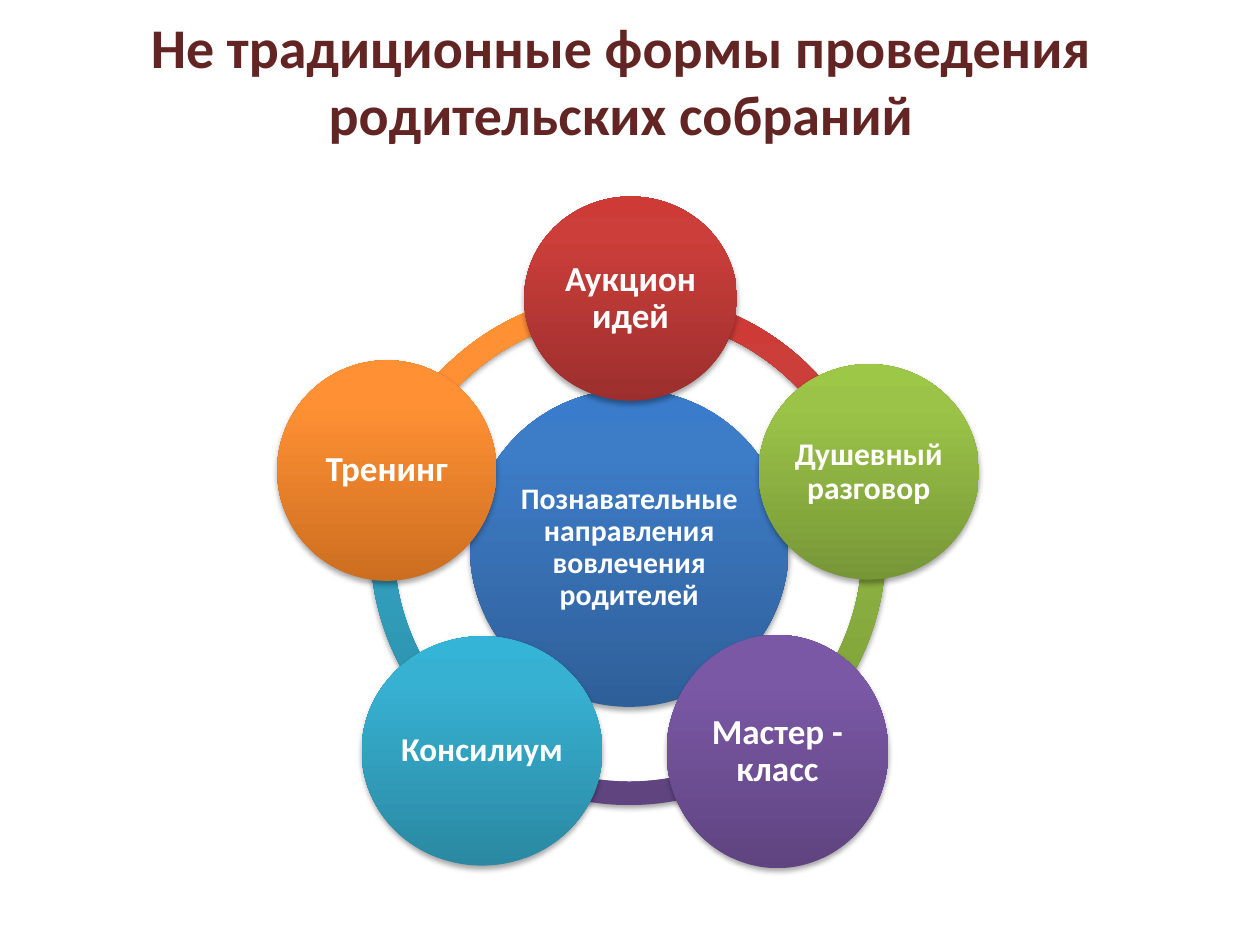
"""Build a slide with a ring of five parent-meeting formats around a central topic."""
import pptx
import pptx.dml.color
import pptx.enum.shapes
import pptx.enum.text
import pptx.oxml
import pptx.oxml.ns
import pptx.util

Inches = pptx.util.Inches
SHAPE = pptx.enum.shapes.MSO_SHAPE
MIDDLE = pptx.enum.text.MSO_ANCHOR.MIDDLE

THEME = {
    "font": "Calibri",
    "title": "632523",
    "label": "FFFFFF",
    "shadow": "000000",
    "blue": ("2F5F99", "3D7CC7", "3A7CCB"),
    "red": ("9C2F2D", "CB3E3A", "CE3B37"),
    "green": ("779737", "9BC348", "9DC746"),
    "purple": ("5F4480", "7B58A6", "7C57A8"),
    "teal": ("2A88A2", "37B1D2", "34B4D6"),
    "orange": ("CC6E20", "FF9034", "FF9136"),
    "title_size": 32,
    "core_size": 17,
    "small_size": 18,
    "medium_size": 19,
    "large_size": 20,
}


def add_glossy(kind, box, hue):
    shape = slide.shapes.add_shape(kind, *(Inches(length) for length in box))
    shape.line.fill.background()
    namespace = pptx.oxml.ns.nsdecls("a")
    stops = "".join(
        f'<a:gs pos="{position}"><a:srgbClr val="{color}"/></a:gs>'
        for position, color in zip((0, 80000, 100000), THEME[hue])
    )
    properties = shape._element.spPr
    properties.insert(2, pptx.oxml.parse_xml(
        f'<a:gradFill {namespace} rotWithShape="1"><a:gsLst>{stops}</a:gsLst>'
        '<a:lin ang="16200000" scaled="0"/></a:gradFill>'
    ))
    properties.append(pptx.oxml.parse_xml(
        f'<a:effectLst {namespace}><a:outerShdw blurRad="40000" dist="23000" '
        f'dir="5400000" rotWithShape="0"><a:srgbClr val="{THEME["shadow"]}">'
        '<a:alpha val="35000"/></a:srgbClr></a:outerShdw></a:effectLst>'
    ))
    return shape


def write(frame, words, size, color):
    frame.text = words
    frame.word_wrap = True
    frame.auto_size = pptx.enum.text.MSO_AUTO_SIZE.NONE
    frame.vertical_anchor = MIDDLE
    paragraph = frame.paragraphs[0]
    paragraph.alignment = pptx.enum.text.PP_ALIGN.CENTER
    font = paragraph.runs[0].font
    font.name = THEME["font"]
    font.size = pptx.util.Pt(THEME[size])
    font.bold = True
    font.color.rgb = pptx.dml.color.RGBColor.from_string(THEME[color])


deck = pptx.Presentation()
deck.slide_width, deck.slide_height = Inches(10), Inches(7.5)
slide = deck.slides.add_slide(deck.slide_layouts[5])

heading = slide.shapes.title
heading.left, heading.top = Inches(0.43), Inches(0.21)
heading.width, heading.height = Inches(9), Inches(0.85)
write(heading.text_frame, "Не традиционные формы проведения родительских собраний",
      "title_size", "title")

RING_SIZE = 4.07
RING_THICKNESS = 0.046
ring_corners = {
    "red": (2.96, 2.32),
    "green": (2.96, 2.32),
    "purple": (2.96, 2.32),
    "teal": (2.94, 2.3),
    "orange": (2.93, 2.32),
}
sweep = 360 / len(ring_corners)
for step, (hue, corner) in reversed(list(enumerate(ring_corners.items()))):
    ring_part = add_glossy(SHAPE.BLOCK_ARC, (*corner, RING_SIZE, RING_SIZE), hue)
    start = (270 + step * sweep) % 360
    end = (start + sweep) % 360
    ring_part.adjustments[0] = start * 0.6
    ring_part.adjustments[1] = end * 0.6
    ring_part.adjustments[2] = RING_THICKNESS

topics = [
    ("Познавательные направления вовлечения родителей", "blue", "core_size",
     (3.73, 3.09, 2.53, 2.52)),
    ("Аукцион идей", "red", "large_size", (4.16, 1.56, 1.69, 1.62)),
    ("Душевный разговор", "green", "small_size", (6.02, 2.89, 1.75, 1.71)),
    ("Мастер - класс", "purple", "large_size", (5.29, 5.04, 1.76, 1.85)),
    ("Консилиум", "teal", "medium_size", (2.87, 5.05, 1.91, 1.82)),
    ("Тренинг", "orange", "large_size", (2.2, 2.86, 1.74, 1.75)),
]
for words, hue, size, box in topics:
    topic = add_glossy(SHAPE.OVAL, box, hue)
    label = topic.text_frame
    write(label, words, size, "label")
    label.margin_left = label.margin_right = Inches(0.02)
    label.margin_top = label.margin_bottom = Inches(0.02)
    label.paragraphs[0].line_spacing = 0.9

deck.save("out.pptx")
